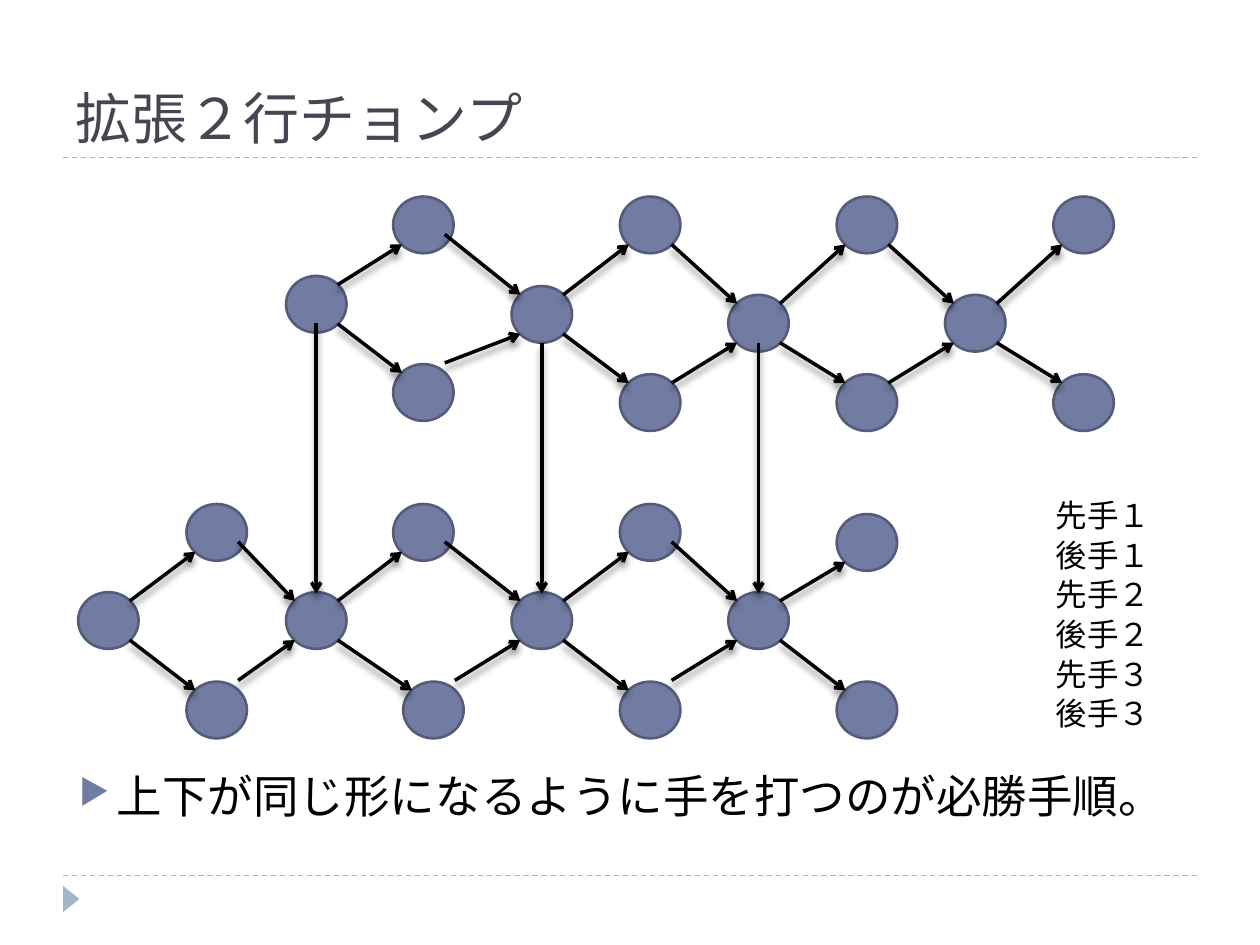
from lxml import etree
from pptx import Presentation
from pptx.dml.color import RGBColor
from pptx.enum import dml, shapes, text
from pptx.oxml import parse_xml
from pptx.oxml.ns import nsdecls, qn
from pptx.util import Inches, Pt

THEME = {
    "title": (32, "Roboto Slab", "464653"),
    "body": (26, "Cabin", "000000"),
    "label": (18, "Cabin", "000000"),
    "node": "727CA3",
    "node_line": "545C79",
    "arrow": "000000",
    "rule": "9FB8CD",
}

TITLE = "拡張２行チョンプ"
MESSAGE = "上下が同じ形になるように手を打つのが必勝手順。"
MOVES = ["先手１", "後手１", "先手２", "後手２", "先手３", "後手３"]

# Each diamond: hub, upper branch, lower branch (left, top), and the
# height by which the arrows to the next hub start above the usual points.
RAISE = 0.08
UPPER_CHAIN = [
    ((2.27, 2.19), (3.12, 1.56), (3.12, 2.89), RAISE),
    ((4.06, 2.27), (4.92, 1.56), (4.92, 2.97), 0),
    ((5.78, 2.34), (6.64, 1.56), (6.64, 2.97), 0),
    ((7.5, 2.34), (8.36, 1.56), (8.36, 2.97), 0),
]
LOWER_CHAIN = [
    ((0.62, 4.7), (1.48, 4), (1.48, 5.41), RAISE),
    ((2.27, 4.7), (3.12, 4), (3.2, 5.41), RAISE),
    ((4.06, 4.7), (4.92, 4), (4.92, 5.41), RAISE),
    ((5.78, 4.7), (6.64, 4.08), (6.64, 5.41), 0),
]
DROP_STARTS = [2.56, 2.72, 2.72]
DROP_END = 4.71

NODE_WIDTH, NODE_HEIGHT = 0.48, 0.45
EDGE = 0.07  # inset of the diagonal contact points on a node


def color(name):
    return RGBColor.from_string(THEME.get(name, name))


def style(paragraph, role):
    size, font, rgb = THEME[role]
    paragraph.font.size = Pt(size)
    paragraph.font.name = font
    paragraph.font.color.rgb = color(rgb)


def add_text(slide, content, role, left, top, width, height):
    frame = slide.shapes.add_textbox(
        Inches(left), Inches(top), Inches(width), Inches(height)).text_frame
    frame.word_wrap = True
    paragraph = frame.paragraphs[0]
    paragraph.text = content
    style(paragraph, role)
    return paragraph


def add_line(slide, start, end, rgb, width):
    line = slide.shapes.add_connector(
        shapes.MSO_CONNECTOR.STRAIGHT, *map(Inches, (*start, *end)))
    line.line.color.rgb = color(rgb)
    line.line.width = Pt(width)
    return line


def add_rule(slide, top):
    rule = add_line(slide, (0.5, top), (9.5, top), "rule", 0.75)
    rule.line.dash_style = dml.MSO_LINE.DASH
    etree.SubElement(rule._element.spPr, qn("a:effectLst"))


def add_arrow(slide, start, end):
    properties = add_line(slide, start, end, "arrow", 2)._element.spPr
    etree.SubElement(properties.find(qn("a:ln")), qn("a:tailEnd"), type="arrow")
    properties.append(parse_xml(
        f'<a:effectLst {nsdecls("a")}>'
        f'<a:outerShdw blurRad="{Pt(4)}" dist="{Pt(3.4)}" dir="5400000" rotWithShape="0">'
        '<a:srgbClr val="000000"><a:alpha val="40000"/></a:srgbClr>'
        '</a:outerShdw></a:effectLst>'))


def add_filled(slide, kind, left, top, width, height, fill):
    shape = slide.shapes.add_shape(
        kind, Inches(left), Inches(top), Inches(width), Inches(height))
    shape.shadow.inherit = False
    shape.fill.solid()
    shape.fill.fore_color.rgb = color(fill)
    shape.line.fill.background()
    return shape


def add_node(slide, node):
    shape = add_filled(slide, shapes.MSO_SHAPE.OVAL, *node,
                       NODE_WIDTH, NODE_HEIGHT, "node")
    shape.line.color.rgb = color("node_line")
    shape.line.width = Pt(1.5)


def contact(node, right, low, lift=0):
    """Diagonal point of a node where an arrow starts or ends."""
    left, top = node
    return (left + (NODE_WIDTH - EDGE if right else EDGE),
            top + (NODE_HEIGHT - EDGE if low else EDGE) - lift)


def add_chain_arrows(slide, chain):
    next_hubs = [diamond[0] for diamond in chain[1:]] + [None]
    for (hub, upper, lower, lift), next_hub in zip(chain, next_hubs):
        for branch, low in ((upper, False), (lower, True)):
            add_arrow(slide, contact(hub, True, low),
                      contact(branch, False, not low))
            if next_hub:
                add_arrow(slide, contact(branch, True, not low, lift),
                          contact(next_hub, False, low))


def add_message(slide):
    paragraph = add_text(slide, MESSAGE, "body", 0.53, 6.05, 9, 1.06)
    paragraph.space_before = Pt(6)
    properties = paragraph._p.get_or_add_pPr()
    properties.set("marL", str(Inches(0.3)))
    properties.set("indent", str(Inches(-0.3)))
    bullet_color = etree.SubElement(properties, qn("a:buClr"))
    etree.SubElement(bullet_color, qn("a:srgbClr"), val=THEME["node"])
    etree.SubElement(properties, qn("a:buSzPct"), val="76000")
    etree.SubElement(properties, qn("a:buChar"), char="▶")


def add_title(slide):
    title = slide.shapes.title
    title.left, title.top = Inches(0.5), Inches(0.17)
    title.width, title.height = Inches(9), Inches(1.08)
    title.text_frame.text = TITLE
    title.text_frame.vertical_anchor = text.MSO_ANCHOR.BOTTOM
    paragraph = title.text_frame.paragraphs[0]
    paragraph.alignment = text.PP_ALIGN.LEFT
    style(paragraph, "title")


def main():
    presentation = Presentation()
    presentation.slide_width, presentation.slide_height = Inches(10), Inches(7.5)
    slide = presentation.slides.add_slide(presentation.slide_layouts[5])

    add_title(slide)
    for top in (6.95, 1.25):
        add_rule(slide, top)
    marker = add_filled(slide, shapes.MSO_SHAPE.ISOSCELES_TRIANGLE,
                        0.46, 7.07, 0.21, 0.13, "rule")
    marker.rotation = 90

    for hub, upper, lower, _ in UPPER_CHAIN + LOWER_CHAIN:
        for node in (hub, upper, lower):
            add_node(slide, node)
    for chain in (UPPER_CHAIN, LOWER_CHAIN):
        add_chain_arrows(slide, chain)
    for (hub, *_), start in zip(UPPER_CHAIN, DROP_STARTS):
        center = hub[0] + NODE_WIDTH / 2
        add_arrow(slide, (center, start), (center, DROP_END))

    for row, move in enumerate(MOVES):
        add_text(slide, move, "label", 8.28, 3.89 + row * 0.314, 1.1, 0.4)
    add_message(slide)
    presentation.save("out.pptx")


if __name__ == "__main__":
    main()
